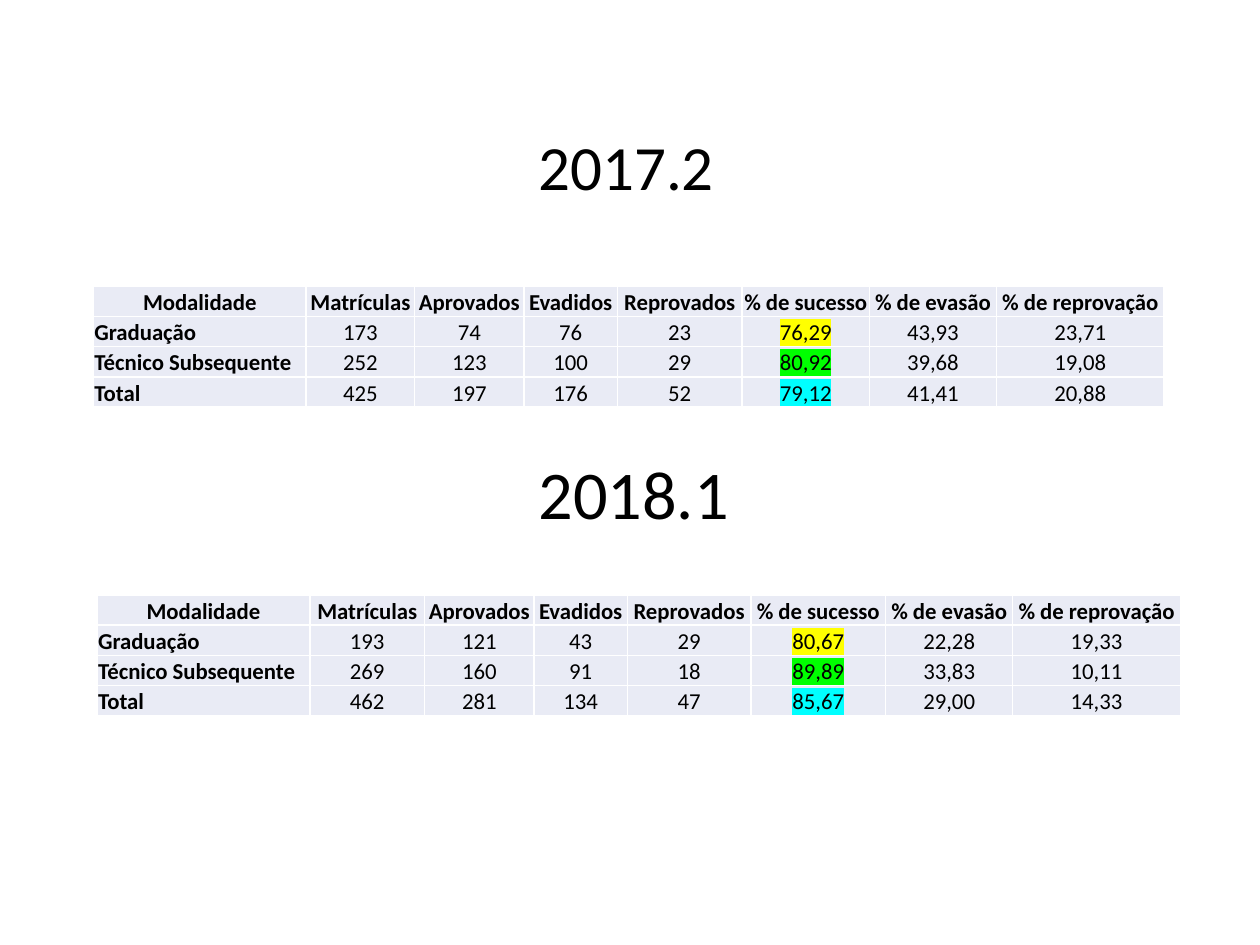
from dataclasses import dataclass

from lxml import etree
from pptx import Presentation
from pptx.dml.color import RGBColor
from pptx.enum import text as t
from pptx.oxml import ns
from pptx.util import Pt


@dataclass(frozen=True)
class Theme:
    font: str = "Calibri"
    ink: str = "000000"
    cell: str = "E9EBF5"
    border: str = "FFFFFF"
    highlights: tuple = ("FFFF00", "00FF00", "00FFFF")
    title_size: float = 36
    subtitle_size: float = 39
    table_size: float = 13


THEME = Theme()
ROW_HEIGHT = 17.28
SUCCESS_COL = 5
HEADER = ["Modalidade", "Matrículas", "Aprovados", "Evadidos", "Reprovados",
          "% de sucesso", "% de evasão", "% de reprovação"]

ROWS_2017 = [
    ["Graduação", "173", "74", "76", "23", "76,29", "43,93", "23,71"],
    ["Técnico Subsequente", "252", "123", "100", "29", "80,92", "39,68", "19,08"],
    ["Total", "425", "197", "176", "52", "79,12", "41,41", "20,88"],
]
ROWS_2018 = [
    ["Graduação", "193", "121", "43", "29", "80,67", "22,28", "19,33"],
    ["Técnico Subsequente", "269", "160", "91", "18", "89,89", "33,83", "10,11"],
    ["Total", "462", "281", "134", "47", "85,67", "29,00", "14,33"],
]
WIDTHS_2017 = [121.7, 61.9, 62.6, 53.3, 71.3, 72.7, 72.7, 95.8]
WIDTHS_2018 = [121.7, 65.5, 62.6, 53.3, 70.6, 77, 72.7, 95.8]


def set_all(obj, values):
    for name, value in values.items():
        setattr(obj, name, value)


def write(tf, content, size, align, bold=False, spacing=None):
    p = tf.paragraphs[0]
    set_all(p, {"alignment": align, "line_spacing": spacing})
    r = p.add_run()
    r.text = content
    set_all(r.font, {"name": THEME.font, "size": Pt(size), "bold": bold})
    r.font.color.rgb = RGBColor.from_string(THEME.ink)
    return r


def add_heading(sp, content, left, top, size, spacing):
    set_all(sp, {"left": Pt(left), "top": Pt(top),
                 "width": Pt(157), "height": Pt(48.2)})
    set_all(sp.text_frame, {"word_wrap": True,
                            "auto_size": t.MSO_AUTO_SIZE.NONE,
                            "vertical_anchor": t.MSO_ANCHOR.BOTTOM})
    write(sp.text_frame, content, size, t.PP_ALIGN.CENTER, spacing=spacing)


def highlight(r, color):
    mark = etree.Element(ns.qn("a:highlight"))
    etree.SubElement(mark, ns.qn("a:srgbClr"), val=color)
    r.font._element.find(ns.qn("a:solidFill")).addnext(mark)


def add_borders(cell):
    tc_pr = cell._tc.get_or_add_tcPr()
    for i, side in enumerate(("lnL", "lnR", "lnT", "lnB")):
        line = etree.Element(ns.qn(f"a:{side}"), w=str(Pt(1)))
        fill = etree.SubElement(line, ns.qn("a:solidFill"))
        etree.SubElement(fill, ns.qn("a:srgbClr"), val=THEME.border)
        tc_pr.insert(i, line)


def format_cell(cell):
    set_all(cell, {"margin_left": Pt(0.7), "margin_right": Pt(0.7),
                   "margin_top": Pt(0.7), "margin_bottom": 0,
                   "vertical_anchor": t.MSO_ANCHOR.BOTTOM})
    cell.fill.solid()
    cell.fill.fore_color.rgb = RGBColor.from_string(THEME.cell)
    add_borders(cell)


def add_results(s, left, top, widths, body):
    rows = [HEADER] + body
    table = s.shapes.add_table(len(rows), len(HEADER), Pt(left), Pt(top),
                               Pt(sum(widths)), Pt(ROW_HEIGHT * len(rows))).table
    for column, width in zip(table.columns, widths):
        column.width = Pt(width)
    for i, row in enumerate(rows):
        table.rows[i].height = Pt(ROW_HEIGHT)
        for j, content in enumerate(row):
            cell = table.cell(i, j)
            format_cell(cell)
            is_label = i > 0 and j == 0
            align = t.PP_ALIGN.LEFT if is_label else t.PP_ALIGN.CENTER
            r = write(cell.text_frame, content, THEME.table_size, align,
                      bold=i == 0 or is_label)
            if i > 0 and j == SUCCESS_COL:
                highlight(r, THEME.highlights[i - 1])


def main():
    prs = Presentation()
    set_all(prs, {"slide_width": Pt(720), "slide_height": Pt(540)})
    s = prs.slides.add_slide(prs.slide_layouts[5])

    # First term
    add_heading(s.shapes.title, "2017.2", 279.4, 72, THEME.title_size, 0.9)
    add_results(s, 53.3, 163.6, WIDTHS_2017, ROWS_2017)

    # Second term
    sp = s.shapes.add_textbox(0, 0, 0, 0)
    add_heading(sp, "2018.1", 283.7, 260, THEME.subtitle_size, 0.8)
    add_results(s, 55.4, 340, WIDTHS_2018, ROWS_2018)

    prs.save("out.pptx")


if __name__ == "__main__":
    main()
